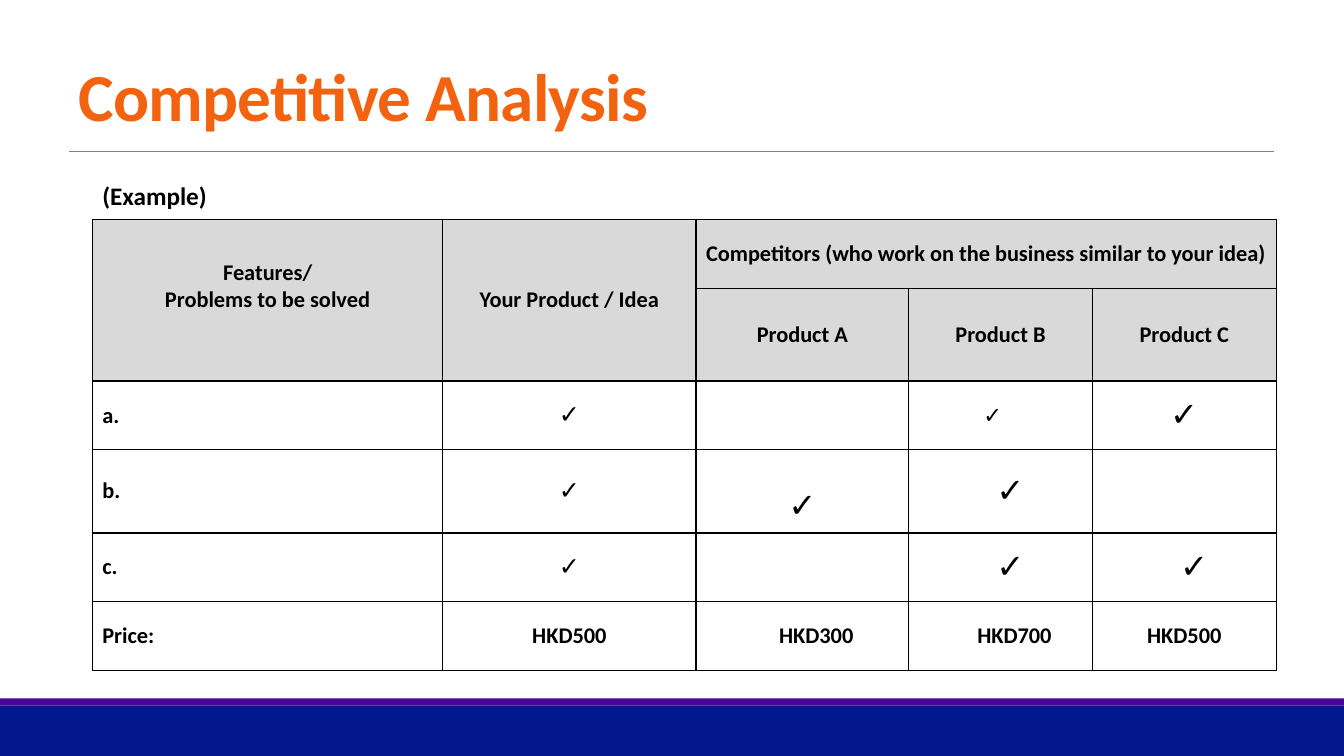
from lxml.etree import SubElement
from pptx import Presentation
from pptx.dml.color import RGBColor
from pptx.enum.shapes import MSO_CONNECTOR as CONNECTOR, MSO_SHAPE as SHAPE
from pptx.enum.text import MSO_ANCHOR as ANCHOR, MSO_AUTO_SIZE as AUTO_SIZE, PP_ALIGN as ALIGN
from pptx.oxml.ns import qn
from pptx.util import Cm, Pt

TITLE = "Competitive Analysis"
CAPTION = "(Example)"
FONT = "Calibri"
BLACK, WHITE, GREY, ORANGE = "000000", "FFFFFF", "D9D9D9", "F2620F"

ROWS = [
    ["Features/\nProblems to be solved", "Your Product / Idea",
     "Competitors (who work on the business similar to your idea)", "", ""],
    ["", "", "Product A", "Product B", "Product C"],
    ["a.", "✓", "", "✓", "✓"],
    ["b.", "✓", "✓", "✓", ""],
    ["c.", "✓", "", "✓", "✓"],
    ["Price:", "HKD500", "HKD300", "HKD700", "HKD500"],
]
HEADER_ROWS = 2
MERGES = [((0, 0), (1, 0)), ((0, 1), (1, 1)), ((0, 2), (0, 4))]
COLUMN_WIDTHS = [8.83, 6.38, 5.36, 4.63, 4.63]
ROW_HEIGHTS = [1.73, 2.32, 1.73, 2.1, 1.73, 1.73]
HANGING = Cm(0.97)

# Extra cell margins in cm that move single entries off centre
NUDGES = {
    (0, 0): {"bottom": 0.7},
    (2, 3): {"right": 0.4},
    (3, 2): {"top": 0.76},
    (3, 3): {"left": 0.5},
    (4, 3): {"left": 0.5},
    (4, 4): {"left": 0.5},
    (5, 2): {"left": 0.7},
    (5, 3): {"left": 0.7},
}
BANDS = [(17.78, 1.27, "03178C"), (17.6, 0.18, "480599")]


def color(hex_string):
    return RGBColor.from_string(hex_string)


def add_run(paragraph, text, size, ink=BLACK):
    run = paragraph.add_run()
    run.text = text
    run.font.name = FONT
    run.font.size = Pt(size)
    run.font.bold = True
    run.font.color.rgb = color(ink)
    return run


def add_borders(cell):
    properties = cell._tc.get_or_add_tcPr()
    for side in ("lnL", "lnR", "lnT", "lnB"):
        line = SubElement(properties, qn(f"a:{side}"), w=str(Pt(1)))
        SubElement(SubElement(line, qn("a:solidFill")), qn("a:srgbClr"), val=BLACK)


def text_size(text, row, column):
    if text != "✓":
        return 16
    if column == 1:
        return 18
    return 16 if (row, column) == (2, 3) else 24


def fill_cell(cell, text, row, column):
    add_borders(cell)
    cell.fill.solid()
    cell.fill.fore_color.rgb = color(GREY if row < HEADER_ROWS else WHITE)
    cell.vertical_anchor = ANCHOR.MIDDLE
    nudge = NUDGES.get((row, column), {})
    cell.margin_left = Cm(0.25 + nudge.get("left", 0))
    cell.margin_right = Cm(0.25 + nudge.get("right", 0))
    cell.margin_top = Cm(0.13 + nudge.get("top", 0))
    cell.margin_bottom = Cm(0.13 + nudge.get("bottom", 0))
    if not text:
        return
    frame = cell.text_frame
    for number, line in enumerate(text.split("\n")):
        paragraph = frame.add_paragraph() if number else frame.paragraphs[0]
        is_label = column == 0 and row >= HEADER_ROWS
        paragraph.alignment = ALIGN.LEFT if is_label else ALIGN.CENTER
        indents = paragraph._p.get_or_add_pPr()
        indents.set("marL", str(HANGING))
        indents.set("indent", str(-HANGING))
        add_run(paragraph, line, text_size(line, row, column))


deck = Presentation()
deck.slide_width, deck.slide_height = Cm(33.87), Cm(19.05)
slide = deck.slides.add_slide(deck.slide_layouts[5])
shapes = slide.shapes

for top, height, ink in BANDS:
    band = shapes.add_shape(SHAPE.RECTANGLE, 0, Cm(top), deck.slide_width, Cm(height))
    band.shadow.inherit = False
    band.fill.solid()
    band.fill.fore_color.rgb = color(ink)
    band.line.fill.background()

rule = shapes.add_connector(CONNECTOR.STRAIGHT, Cm(1.75), Cm(3.82), Cm(32.1), Cm(3.82))
rule.line.color.rgb = color("808080")
rule.line.width = Pt(0.5)
SubElement(rule._element.spPr, qn("a:effectLst"))

title = shapes.title
title.left, title.top, title.width, title.height = Cm(1.72), Cm(0.8), Cm(30.4), Cm(2.73)
title.text_frame.auto_size = AUTO_SIZE.NONE
title.text_frame.vertical_anchor = ANCHOR.BOTTOM
heading = title.text_frame.paragraphs[0]
heading.alignment = ALIGN.LEFT
heading.line_spacing = 0.85
add_run(heading, TITLE, 48, ORANGE).font._element.set("spc", "-50")

comparison = shapes.add_table(
    len(ROWS), len(COLUMN_WIDTHS), Cm(2.33), Cm(5.53),
    Cm(sum(COLUMN_WIDTHS)), Cm(sum(ROW_HEIGHTS))).table
for column, width in zip(comparison.columns, COLUMN_WIDTHS):
    column.width = Cm(width)
for row, height in zip(comparison.rows, ROW_HEIGHTS):
    row.height = Cm(height)
for first, last in MERGES:
    comparison.cell(*first).merge(comparison.cell(*last))
for row, texts in enumerate(ROWS):
    for column, text in enumerate(texts):
        fill_cell(comparison.cell(row, column), text, row, column)

caption = shapes.add_textbox(Cm(2.33), Cm(4.42), Cm(3.3), Cm(1.02))
caption.text_frame.word_wrap = False
add_run(caption.text_frame.paragraphs[0], CAPTION, 18)

deck.save("out.pptx")
